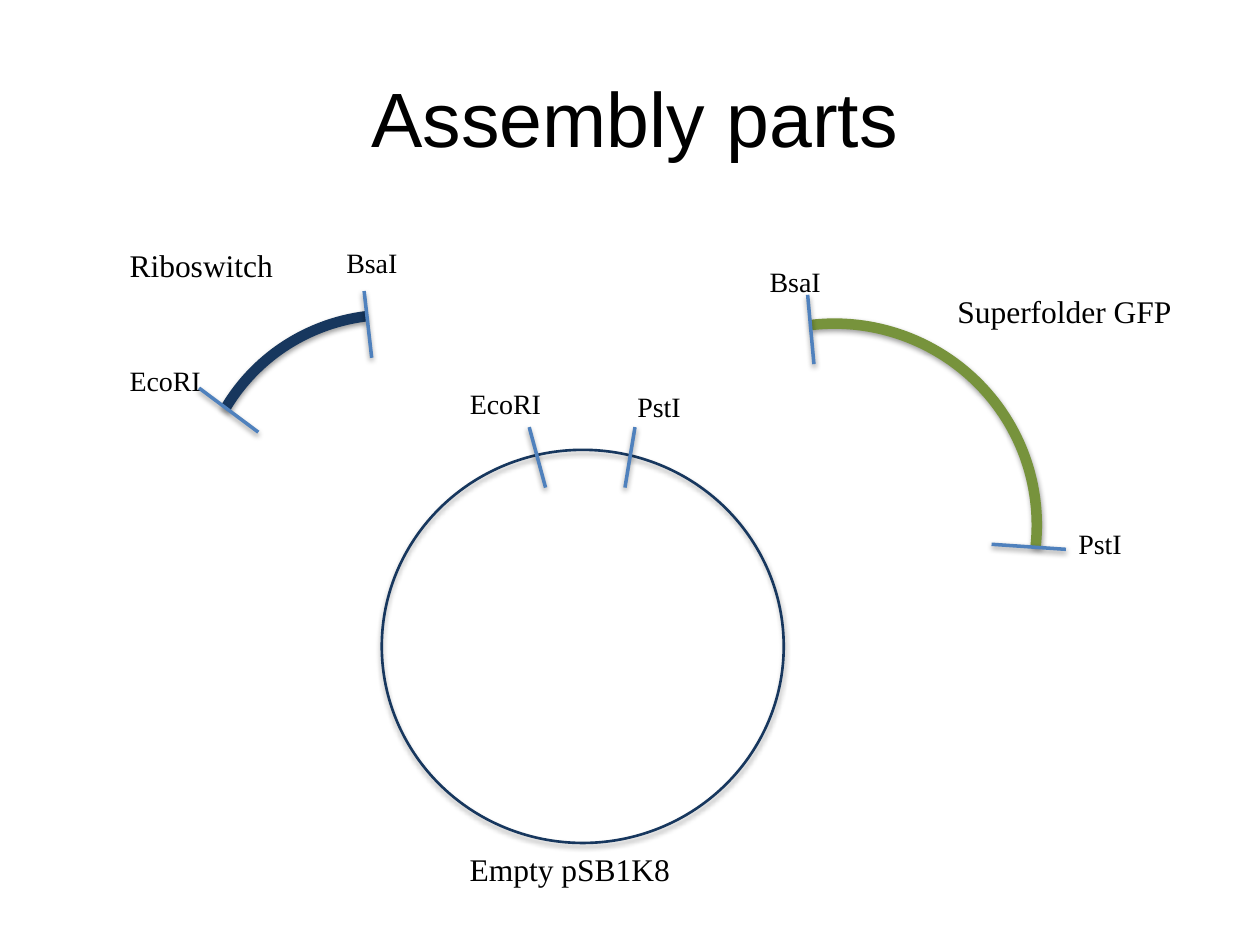
from lxml import etree
from pptx import Presentation, util as u
from pptx.dml.color import RGBColor
from pptx.enum import shapes, text
from pptx.oxml.ns import qn

# Content: places are columns and rows of a 100 x 75 grid
COLS, ROWS = 100, 75
TITLE = "Assembly parts"
HUES = {"ink": "000000", "cut": "4F81BD", "navy": "17375E", "green": "77933C"}

# Cut sites: from x, y, to x, y
CUTS = [
    (15.8, 30.8, 20.5, 34.3),
    (28.9, 23.1, 29.5, 28.4),
    (64.1, 23.4, 64.6, 28.9),
    (78.7, 43.2, 84.6, 43.6),
    (42, 33.9, 43.3, 38.7),
    (50.4, 33.9, 49.6, 38.7),
]
# Gene arcs: box, turn, start and end, hue
ARCS = [
    ((15.9, 24.9, 30.2, 30.4), 294.1, (165.76, 197.08), "navy"),
    ((50.3, 25.7, 32, 31.8), 21.2, (145.12, 207.16), "green"),
]
RING = (30.3, 35.7, 31.9, 31.2)
# Labels by text size: words, left, top, width
SITES = [
    ("EcoRI", 9.3, 28.4, 8),
    ("BsaI", 26.5, 19, 7.3),
    ("BsaI", 60.1, 20.5, 7.3),
    ("PstI", 84.6, 41.3, 5.6),
    ("EcoRI", 36.3, 30.2, 8.1),
    ("PstI", 49.6, 30.4, 7.6),
]
PARTS = [
    ("Riboswitch", 9.3, 19, 13.5),
    ("Superfolder GFP", 75, 22.7, 20),
    ("Empty pSB1K8", 36.3, 67, 18.7),
]
LABELS = [(16, 3.7, SITES), (18, 4, PARTS)]

deck = Presentation()
deck.slide_width, deck.slide_height = u.Inches(10), u.Inches(7.5)
slide = deck.slides.add_slide(deck.slide_layouts[5])
items = slide.shapes


def grid(*spots):
    """Turn x, y, x, y ... on the grid into slide lengths."""
    steps = (deck.slide_width / COLS, deck.slide_height / ROWS)
    return [round(s * steps[i % 2]) for i, s in enumerate(spots)]


def write(para, words, size, font):
    run = para.add_run()
    run.text = words
    run.font.size, run.font.name = u.Pt(size), font
    run.font.color.rgb = RGBColor.from_string(HUES["ink"])


def stroke(item, hue, width, drop=20000, alpha=38000):
    """Set the line and a soft shadow below it."""
    item.line.color.rgb = RGBColor.from_string(HUES[hue])
    item.line.width = u.Pt(width)
    props = item._element.spPr
    effects = etree.SubElement(props, qn("a:effectLst"))
    shade = etree.SubElement(effects, qn("a:outerShdw"), blurRad="40000",
                             dist=str(drop), dir="5400000", rotWithShape="0")
    tint = etree.SubElement(shade, qn("a:srgbClr"), val=HUES["ink"])
    etree.SubElement(tint, qn("a:alpha"), val=str(alpha))


# Title
head = items.title
head.left, head.top, head.width, head.height = grid(5.4, 3, 90, 12.5)
head.text_frame.vertical_anchor = text.MSO_ANCHOR.MIDDLE
para = head.text_frame.paragraphs[0]
para.alignment = text.PP_ALIGN.CENTER
write(para, TITLE, 44, "Arial")

# Gene arcs
for box, turn, ends, hue in ARCS:
    arc = items.add_shape(shapes.MSO_SHAPE.ARC, *grid(*box))
    arc.rotation = turn
    for i, end in enumerate(ends):
        arc.adjustments[i] = end
    arc.fill.background()
    stroke(arc, hue, 6)

# Empty plasmid
ring = items.add_shape(shapes.MSO_SHAPE.OVAL, *grid(*RING))
ring.fill.background()
stroke(ring, "navy", 1.5, drop=23000, alpha=35000)

# Cut sites
for ends in CUTS:
    cut = items.add_connector(shapes.MSO_CONNECTOR.STRAIGHT, *grid(*ends))
    stroke(cut, "cut", 2)

# Labels
for size, high, rows in LABELS:
    for words, left, top, wide in rows:
        frame = items.add_textbox(*grid(left, top, wide, high)).text_frame
        frame.word_wrap = True
        frame.auto_size = text.MSO_AUTO_SIZE.SHAPE_TO_FIT_TEXT
        write(frame.paragraphs[0], words, size, "Times New Roman")

deck.save("out.pptx")
